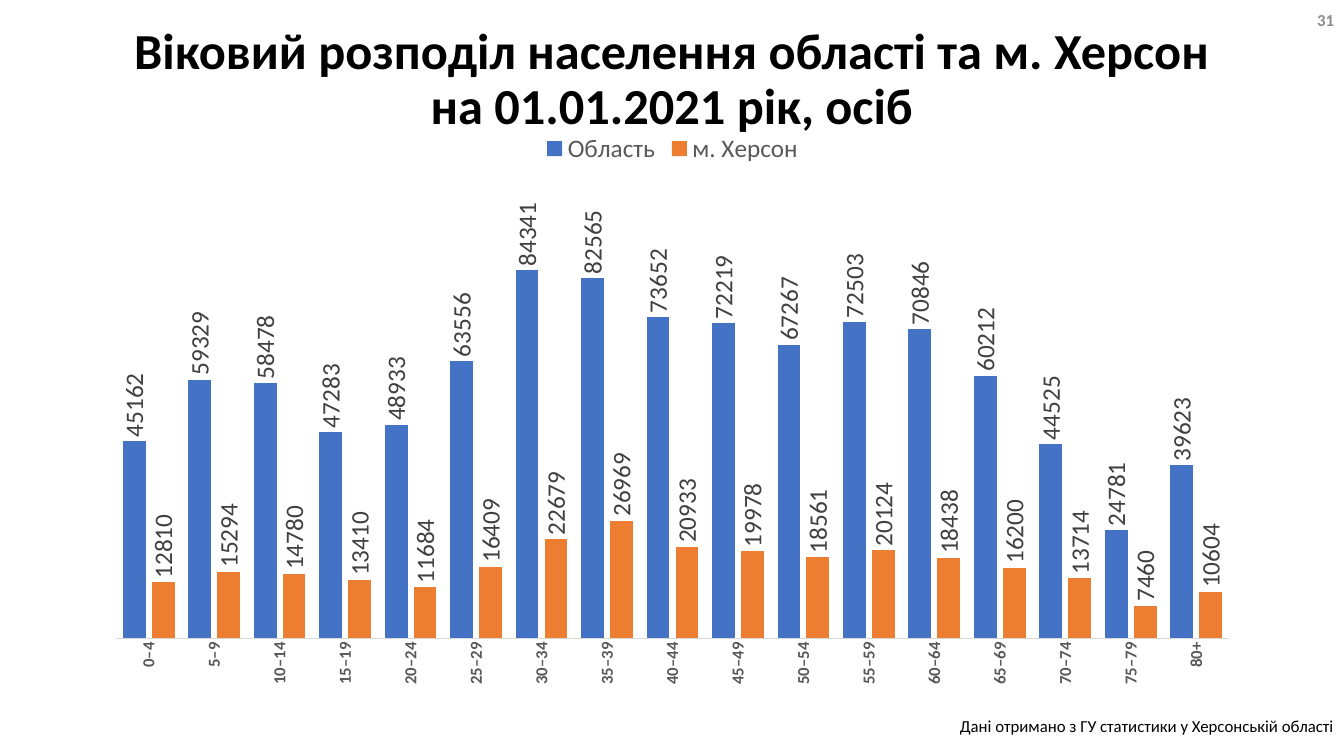
from lxml.etree import SubElement
from pptx import Presentation
from pptx.chart.data import CategoryChartData
from pptx.dml.color import RGBColor
from pptx.enum.chart import XL_CHART_TYPE, XL_LABEL_POSITION, XL_LEGEND_POSITION, XL_TICK_MARK
from pptx.enum.text import MSO_ANCHOR, MSO_AUTO_SIZE, PP_ALIGN
from pptx.oxml.ns import qn
from pptx.util import Inches, Pt

WIDTH, HEIGHT = 13.33, 7.5
FONT = "Calibri"
BLACK, DARK, GREY, PALE = "000000", "404040", "595959", "D9D9D9"

AGE_GROUPS = [f" {age}–{age + 4}" for age in range(0, 80, 5)] + ["80+"]
POPULATION = {
    "Область": ("4472C4", [45162, 59329, 58478, 47283, 48933, 63556, 84341, 82565, 73652,
                           72219, 67267, 72503, 70846, 60212, 44525, 24781, 39623]),
    "м. Херсон": ("ED7D31", [12810, 15294, 14780, 13410, 11684, 16409, 22679, 26969, 20933,
                             19978, 18561, 20124, 18438, 16200, 13714, 7460, 10604]),
}
PLOT_SHARES = {"x": 0.02, "y": 0.21, "w": 0.96, "h": 0.66}


def paint(colour_format, colour):
    colour_format.rgb = RGBColor.from_string(colour)


def style_font(font, size, colour, bold=False):
    font.name, font.size, font.bold = FONT, Pt(size), bold
    paint(font.color, colour)


def box(left, top, width, height):
    return [Inches(length) for length in (left, top, width, height)]


def write(frame, text, size, colour, align, bold=False, anchor=MSO_ANCHOR.TOP):
    frame.word_wrap = True
    frame.auto_size = MSO_AUTO_SIZE.NONE
    frame.vertical_anchor = anchor
    paragraph = frame.paragraphs[0]
    paragraph.text = text
    paragraph.alignment = align
    for run in paragraph.runs:
        style_font(run.font, size, colour, bold)
    return paragraph


def add_title(slide, text):
    title = slide.shapes.title
    title.left, title.top, title.width, title.height = box(0, 0.4, WIDTH, 0.8)
    heading = write(title.text_frame, text, 36, BLACK, PP_ALIGN.CENTER, True, MSO_ANCHOR.MIDDLE)
    heading.line_spacing = 0.9


def add_note(slide, place, text, colour, **look):
    note = slide.shapes.add_textbox(*box(*place))
    write(note.text_frame, text, 12, colour, PP_ALIGN.RIGHT, **look)


def fix_plot_area(chart_space):
    plot_area = chart_space.xpath("c:chart/c:plotArea")[0]
    for layout in plot_area.findall(qn("c:layout")):
        plot_area.remove(layout)
    layout = SubElement(plot_area, qn("c:layout"))
    plot_area.insert(0, layout)
    manual = SubElement(layout, qn("c:manualLayout"))
    settings = {"layoutTarget": "inner", "xMode": "edge", "yMode": "edge", **PLOT_SHARES}
    for tag, value in settings.items():
        SubElement(manual, qn(f"c:{tag}")).set("val", str(value))


def turn_labels_upright(chart_space):
    for body in chart_space.xpath(".//c:dLbls/c:txPr/a:bodyPr | .//c:catAx/c:txPr/a:bodyPr"):
        body.set("rot", "-5400000")
        body.set("vert", "horz")


def format_axes(chart):
    ages = chart.category_axis
    ages.major_tick_mark = ages.minor_tick_mark = XL_TICK_MARK.NONE
    style_font(ages.tick_labels.font, 12, GREY, True)
    paint(ages.format.line.color, PALE)
    ages.format.line.width = Pt(0.75)

    people = chart.value_axis
    people.minimum_scale, people.maximum_scale = 0, 90000
    people.has_major_gridlines = False
    people.visible = False


def format_series(series, colour):
    series.format.fill.solid()
    paint(series.format.fill.fore_color, colour)
    series.invert_if_negative = False
    labels = series.data_labels
    labels.show_value = True
    labels.position = XL_LABEL_POSITION.OUTSIDE_END
    labels.number_format, labels.number_format_is_linked = "0", False
    style_font(labels.font, 18, DARK)


def add_population_chart(slide):
    population = CategoryChartData(number_format="0")
    population.categories = AGE_GROUPS
    for name, (_, people) in POPULATION.items():
        population.add_series(name, people)
    chart = slide.shapes.add_chart(
        XL_CHART_TYPE.COLUMN_CLUSTERED, *box(0.92, 1.2, 11.5, 5.9), population).chart
    style_font(chart.font, 18, BLACK)
    chart.has_title = False

    # Legend
    chart.has_legend = True
    chart.legend.position = XL_LEGEND_POSITION.TOP
    chart.legend.include_in_layout = False
    style_font(chart.legend.font, 18, GREY)

    # Columns and axes
    columns = chart.plots[0]
    columns.gap_width, columns.overlap = 60, -27
    columns.vary_by_categories = False
    for series in columns.series:
        format_series(series, POPULATION[series.name][0])
    format_axes(chart)
    fix_plot_area(chart._chartSpace)
    turn_labels_upright(chart._chartSpace)


def main():
    deck = Presentation()
    deck.slide_width, deck.slide_height = Inches(WIDTH), Inches(HEIGHT)
    slide = deck.slides.add_slide(deck.slide_layouts[5])

    add_title(slide, "Віковий розподіл населення області та м. Херсон\vна 01.01.2021 рік, осіб")
    # Source of the figures
    add_note(slide, (0, 7.05, WIDTH, 0.3),
             "Дані отримано з ГУ статистики у Херсонській області", BLACK)
    add_population_chart(slide)
    # Page number
    add_note(slide, (WIDTH - 3, 0, 3, 0.4), "31", "8C8C8C", bold=True, anchor=MSO_ANCHOR.MIDDLE)

    deck.save("out.pptx")


if __name__ == "__main__":
    main()
